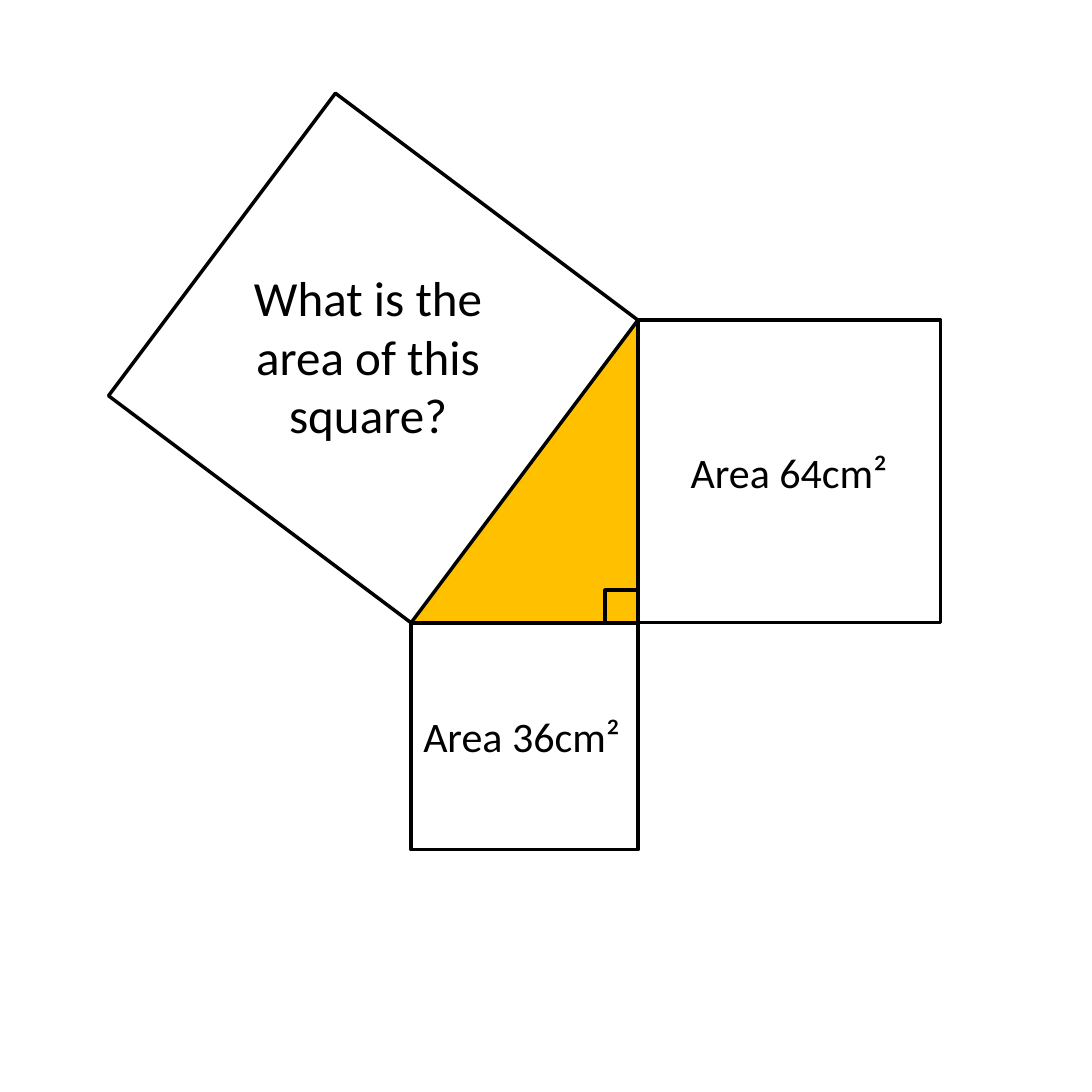
from dataclasses import dataclass
from math import atan2, degrees, hypot

from pptx import Presentation
from pptx.dml.color import RGBColor
from pptx.enum.shapes import MSO_SHAPE
from pptx.enum.text import MSO_AUTO_SIZE, PP_ALIGN
from pptx.util import Inches, Pt

RECT = MSO_SHAPE.RECTANGLE
WEDGE = MSO_SHAPE.RIGHT_TRIANGLE
GROW = MSO_AUTO_SIZE.SHAPE_TO_FIT_TEXT
LEFT, CENTER = PP_ALIGN.LEFT, PP_ALIGN.CENTER


@dataclass(frozen=True)
class Theme:
    """Colours, font and sizes of the slide."""
    ink: RGBColor = RGBColor(0, 0, 0)
    gold: RGBColor = RGBColor(0xFF, 0xC0, 0)
    font: str = "Calibri"
    label: Pt = Pt(12)
    ask: Pt = Pt(14)
    line: Pt = Pt(1)


THEME = Theme()


def set_all(item, values):
    """Set each named attribute of an item."""
    for name, value in values.items():
        setattr(item, name, value)


def add_square(slide, mid_x, mid_y, side, turn=0):
    """Outline a square around its centre."""
    box = (mid_x - side / 2, mid_y - side / 2, side, side)
    square = slide.shapes.add_shape(RECT, *map(Inches, box))
    square.shadow.inherit = False
    square.rotation = turn
    square.fill.background()
    square.line.color.rgb = THEME.ink
    square.line.width = THEME.line


def add_wedge(slide, left, top, width, height):
    """Fill a triangle with its right angle at the lower right."""
    box = map(Inches, (left, top, width, height))
    wedge = slide.shapes.add_shape(WEDGE, *box)
    wedge.shadow.inherit = False
    wedge.fill.solid()
    wedge.fill.fore_color.rgb = THEME.gold
    wedge.line.fill.background()
    wedge._element.spPr.xfrm.set("flipH", "1")


def add_label(slide, text, box, size, align=LEFT, wrap=False):
    """Write a text box in the slide font."""
    frame = slide.shapes.add_textbox(*map(Inches, box)).text_frame
    set_all(frame, {"text": text, "word_wrap": wrap, "auto_size": GROW})
    line = frame.paragraphs[0]
    line.alignment = align
    font = line.runs[0].font
    set_all(font, {"name": THEME.font, "size": size})
    font.color.rgb = THEME.ink


def main():
    """Build the slide of squares on a right triangle."""
    deck = Presentation()
    set_all(deck, {"slide_width": Inches(4.33), "slide_height": Inches(4.33)})
    slide = deck.slides.add_slide(deck.slide_layouts[6])

    left, top, base, rise, mark = 1.63, 1.27, 0.9, 1.2, 0.13
    right, floor = left + base, top + rise
    mid_x, mid_y = left + base / 2, top + rise / 2
    turn = degrees(atan2(base, rise))

    add_wedge(slide, left, top, base, rise)
    add_square(slide, mid_x, floor + base / 2, base)
    add_square(slide, mid_x - rise / 2, mid_y - base / 2,
               hypot(base, rise), turn)
    add_square(slide, right + rise / 2, mid_y, rise)
    add_square(slide, right - mark / 2, floor - mark / 2, mark)

    add_label(slide, "Area 36cm²", (1.58, 2.77, 0.99, 0.3), THEME.label)
    add_label(slide, "Area 64cm²", (2.64, 1.72, 0.99, 0.3), THEME.label)
    add_label(slide, "What is the area of this square?",
              (0.84, 1.01, 1.24, 0.81), THEME.ask, CENTER, True)
    deck.save("out.pptx")


if __name__ == "__main__":
    main()
